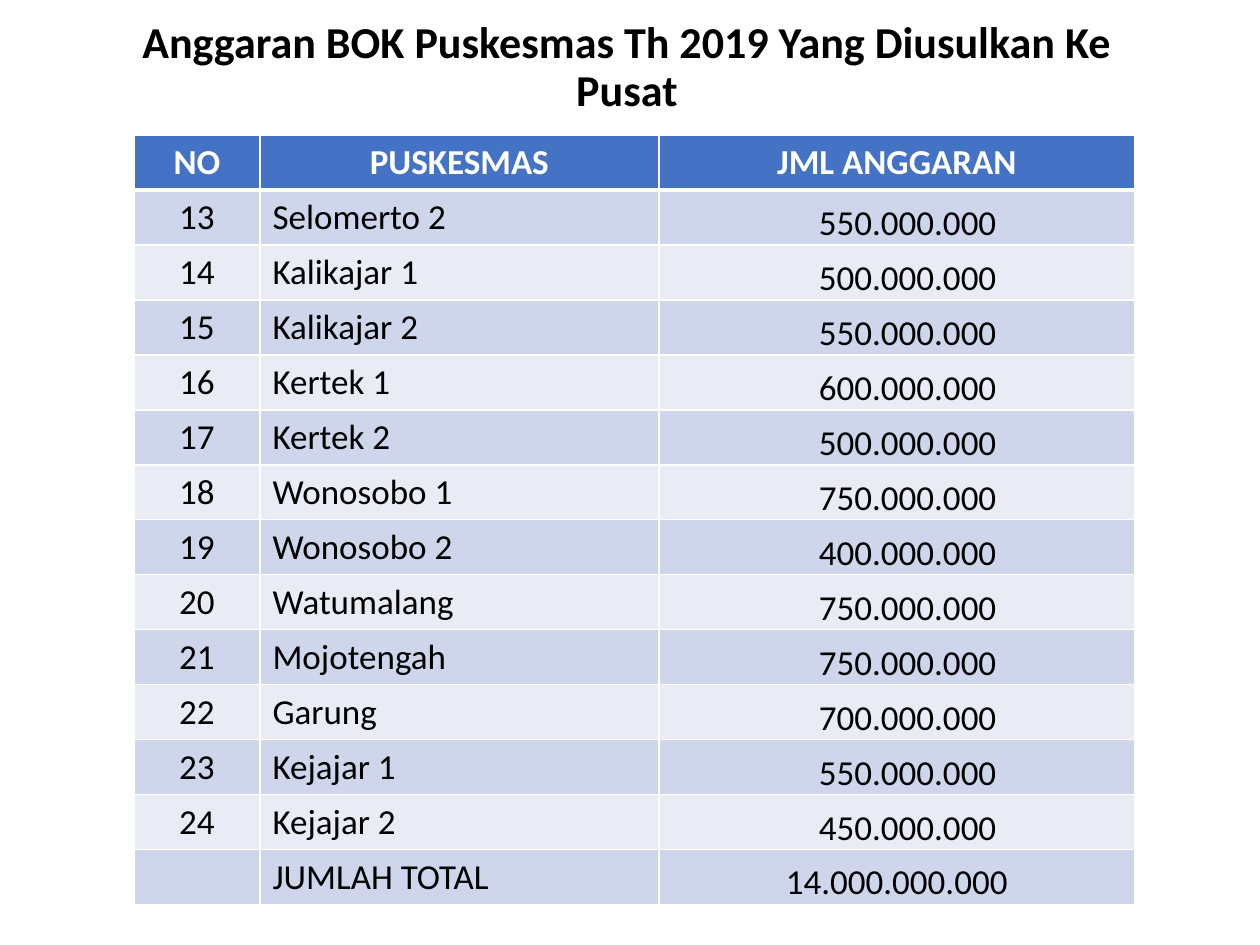
import pptx
import pptx.dml.color
import pptx.enum.text
import pptx.oxml.ns
import pptx.util
import lxml.etree

PX = 914400 // 126
COLORS = {"head": "4472C4", "odd": "CFD5EA", "even": "E9EBF5",
          "white": "FFFFFF", "black": "000000"}
ALIGN = pptx.enum.text.PP_ALIGN
ANCHOR = pptx.enum.text.MSO_ANCHOR


def write(para, text, color, **style):
    run = para.add_run()
    run.text = text
    run.font.color.rgb = pptx.dml.color.RGBColor.from_string(COLORS[color])
    for key, value in {"name": "Calibri", **style}.items():
        setattr(run.font, key, value)


def edge(cell, side, width):
    """Draw a white border of width points on side L, R, T or B."""
    tag = pptx.oxml.ns.qn
    line = lxml.etree.SubElement(cell._tc.get_or_add_tcPr(), tag(f"a:ln{side}"),
                                 w=str(pptx.util.Pt(width)))
    fill = lxml.etree.SubElement(line, tag("a:solidFill"))
    lxml.etree.SubElement(fill, tag("a:srgbClr"), val=COLORS["white"])


deck = pptx.Presentation()
deck.slide_width, deck.slide_height = 1260 * PX, 945 * PX
slide = deck.slides.add_slide(deck.slide_layouts[6])

title = slide.shapes.add_textbox(84 * PX, 26 * PX, 1086 * PX, 84 * PX).text_frame
title.word_wrap = True
title.vertical_anchor = ANCHOR.MIDDLE
para = title.paragraphs[0]
para.alignment, para.line_spacing = ALIGN.CENTER, 0.9
write(para, "Anggaran BOK Puskesmas Th 2019 Yang Diusulkan Ke Pusat", "black",
      size=pptx.util.Pt(25.2), bold=True)

budgets = [("Selomerto 2", 550), ("Kalikajar 1", 500), ("Kalikajar 2", 550),
           ("Kertek 1", 600), ("Kertek 2", 500), ("Wonosobo 1", 750),
           ("Wonosobo 2", 400), ("Watumalang", 750), ("Mojotengah", 750),
           ("Garung", 700), ("Kejajar 1", 550), ("Kejajar 2", 450)]
rows = [("NO", "PUSKESMAS", "JML ANGGARAN")]
for num, (place, sum_) in enumerate(budgets, 13):
    rows.append((str(num), place, f"{sum_}.000.000"))
rows.append(("", "JUMLAH TOTAL", "14.000.000.000"))
last = len(rows) - 1

widths = [126, 399, 476]
height = 55
table = slide.shapes.add_table(len(rows), len(widths), 134 * PX, 135 * PX,
                               sum(widths) * PX, len(rows) * height * PX).table
for col, width in zip(table.columns, widths):
    col.width = width * PX

for r, row in enumerate(rows):
    table.rows[r].height = height * PX
    shade = "head" if r == 0 else "odd" if r % 2 else "even"
    for c, text in enumerate(row):
        cell = table.cell(r, c)
        for side in "LRTB":
            thick = (r, side) in [(0, "B"), (1, "T")]
            edge(cell, side, 3 if thick else 1)
        cell.fill.solid()
        cell.fill.fore_color.rgb = pptx.dml.color.RGBColor.from_string(COLORS[shade])
        if c == 2 and r > 0:
            indent = 1 if r == last else 160
            form = {"vertical_anchor": ANCHOR.BOTTOM, "margin_left": indent * PX,
                    "margin_right": PX, "margin_top": PX, "margin_bottom": 0}
            for key, value in form.items():
                setattr(cell, key, value)
        para = cell.text_frame.paragraphs[0]
        center = r == 0 or c == 0 or (r == last and c == 2)
        para.alignment = ALIGN.CENTER if center else ALIGN.LEFT
        if text:
            write(para, text, "white" if r == 0 else "black",
                  size=pptx.util.Pt(20), bold=r == 0)

deck.save("out.pptx")
